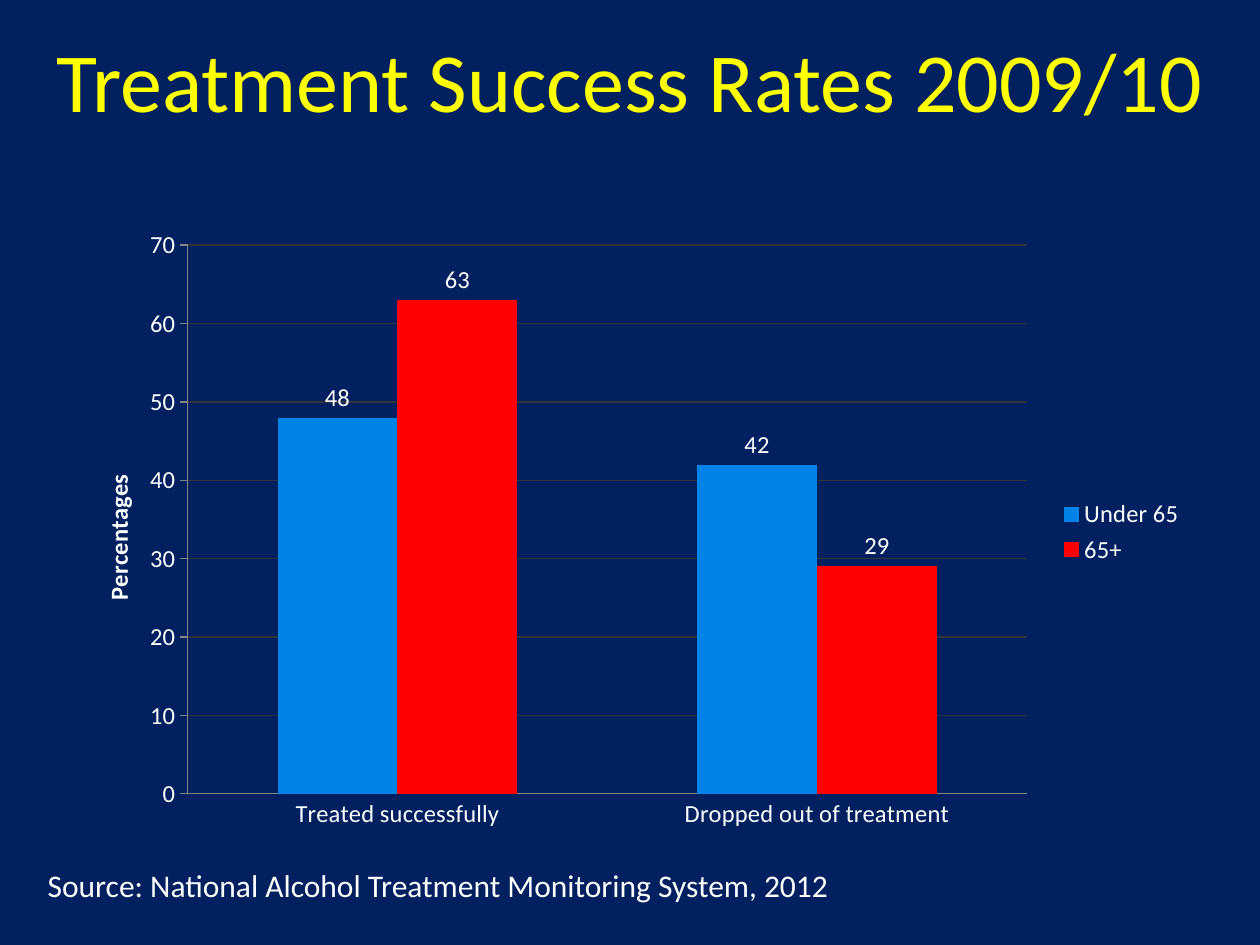
import pptx
import pptx.chart.data
import pptx.dml.color
import pptx.enum.chart
import pptx.enum.text
import pptx.oxml
import pptx.oxml.ns
import pptx.util

COLORS = {"navy": "002060", "yellow": "FFFF00", "white": "FFFFFF",
          "blue": "0083E6", "red": "FF0000", "grid": "343439", "axis": "868686"}
FONT = "Calibri"


def rgb(name):
    """Return the named palette colour."""
    return pptx.dml.color.RGBColor.from_string(COLORS[name])


def set_font(font, size, color, **formats):
    """Apply the deck typeface, size, colour and any other font values."""
    values = {"name": FONT, "size": pptx.util.Pt(size), "bold": False, **formats}
    for key, value in values.items():
        setattr(font, key, value)
    font.color.rgb = rgb(color)


def set_layout(parent, index, **shares):
    """Fix a chart part at shares of the chart's size."""
    for old in parent.findall(pptx.oxml.ns.qn("c:layout")):
        parent.remove(old)
    target = '<c:layoutTarget val="inner"/>' if "w" in shares else ""
    modes = "".join(f'<c:{k}Mode val="edge"/>' for k in shares if k in "xy")
    sizes = "".join(f'<c:{k} val="{v}"/>' for k, v in shares.items())
    parent.insert(index, pptx.oxml.parse_xml(
        f'<c:layout {pptx.oxml.ns.nsdecls("c")}><c:manualLayout>'
        f'{target}{modes}{sizes}</c:manualLayout></c:layout>'))


class Deck:
    """Holds the presentation style and the current slide."""

    def __init__(self, width, height):
        """Start a presentation with one title-only slide."""
        self.prs = pptx.Presentation()
        self.prs.slide_width = pptx.util.Inches(width)
        self.prs.slide_height = pptx.util.Inches(height)
        self.s = self.prs.slides.add_slide(self.prs.slide_layouts[5])
        self.s.background.fill.solid()
        self.s.background.fill.fore_color.rgb = rgb("navy")

    def box(self, x, y, w, h):
        """Turn shares of the slide into lengths."""
        width, height = self.prs.slide_width, self.prs.slide_height
        return int(x * width), int(y * height), int(w * width), int(h * height)

    def title(self, text, *shares):
        """Place and format the title."""
        sp = self.s.shapes.title
        sp.left, sp.top, sp.width, sp.height = self.box(*shares)
        tf = sp.text_frame
        tf.text = text
        tf.vertical_anchor = pptx.enum.text.MSO_ANCHOR.MIDDLE
        p = tf.paragraphs[0]
        p.alignment = pptx.enum.text.PP_ALIGN.CENTER
        set_font(p.runs[0].font, 48, "yellow")

    def text(self, text, *shares):
        """Add a one-line text box."""
        tf = self.s.shapes.add_textbox(*self.box(*shares)).text_frame
        tf.text = text
        tf.word_wrap = False
        tf.auto_size = pptx.enum.text.MSO_AUTO_SIZE.SHAPE_TO_FIT_TEXT
        set_font(tf.paragraphs[0].runs[0].font, 18, "white")

    def columns(self, categories, series, axis_title, *shares):
        """Add a clustered column chart with value labels."""
        kinds = pptx.enum.chart
        data = pptx.chart.data.CategoryChartData()
        data.categories = categories
        for name, values, _ in series:
            data.add_series(name, values)
        chart = self.s.shapes.add_chart(
            kinds.XL_CHART_TYPE.COLUMN_CLUSTERED, *self.box(*shares), data).chart
        set_font(chart.font, 14, "white")
        chart.has_title = False
        chart.has_legend = True
        chart.legend.position = kinds.XL_LEGEND_POSITION.RIGHT
        chart.legend.include_in_layout = False

        plot = chart.plots[0]
        plot.vary_by_categories = False
        plot.gap_width, plot.overlap = 150, 0
        for ser, (_, _, color) in zip(plot.series, series):
            ser.format.fill.solid()
            ser.format.fill.fore_color.rgb = rgb(color)
            ser.data_labels.show_value = True
            ser.data_labels.position = kinds.XL_LABEL_POSITION.OUTSIDE_END
            set_font(ser.data_labels.font, 14, "white")

        axis = chart.value_axis
        axis.minimum_scale, axis.maximum_scale, axis.major_unit = 0, 70, 10
        axis.major_tick_mark = kinds.XL_TICK_MARK.OUTSIDE
        chart.category_axis.major_tick_mark = kinds.XL_TICK_MARK.NONE
        lines = [(axis.major_gridlines, "grid"), (axis, "axis"),
                 (chart.category_axis, "axis")]
        for part, color in lines:
            part.format.line.width = pptx.util.Pt(0.75)
            part.format.line.color.rgb = rgb(color)

        tf = axis.axis_title.text_frame
        tf.text = axis_title
        set_font(tf.paragraphs[0].runs[0].font, 14, "white", bold=True)
        area = chart.element.xpath("c:chart/c:plotArea")[0]
        set_layout(area, 0, x=0.11, y=0.04, w=0.74, h=0.88)
        set_layout(area.xpath("c:valAx/c:title")[0], 1, x=0.03, y=0.4)


def main():
    """Build and save the slide."""
    deck = Deck(10, 7.5)
    deck.title("Treatment Success Rates 2009/10", 0, 0, 1, 1 / 6)
    deck.text("Source: National Alcohol Treatment Monitoring System, 2012",
              0.028, 0.91, 0.65, 0.05)
    deck.columns(["Treated successfully", "Dropped out of treatment"],
                 [("Under 65", (48, 42), "blue"), ("65+", (63, 29), "red")],
                 "Percentages", 0.05, 0.233, 0.9, 0.66)
    deck.prs.save("out.pptx")


if __name__ == "__main__":
    main()
